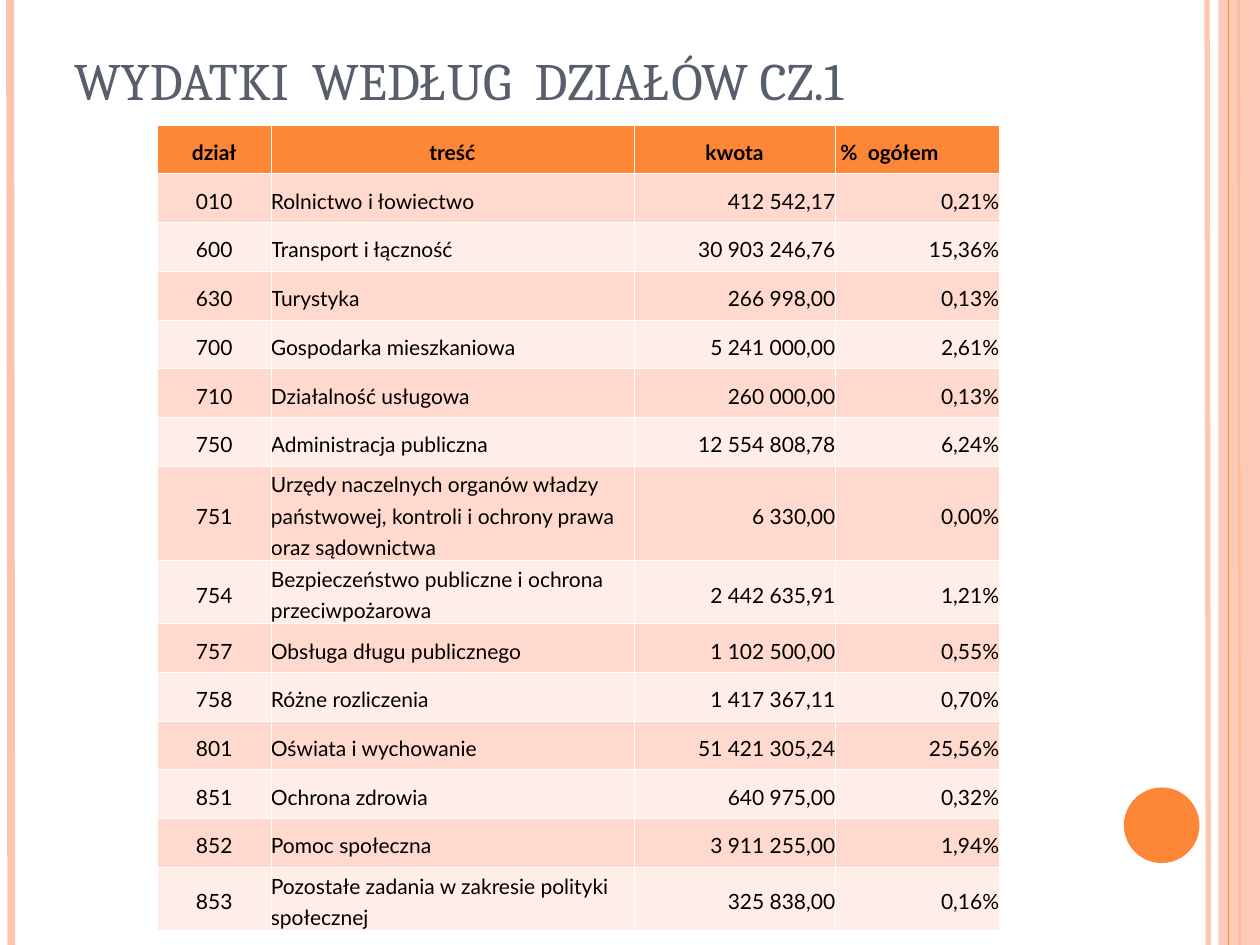
from lxml.etree import SubElement
from pptx import Presentation
from pptx.dml.color import RGBColor
from pptx.enum.shapes import MSO_CONNECTOR, MSO_SHAPE
from pptx.enum.text import MSO_ANCHOR, PP_ALIGN
from pptx.oxml.ns import qn
from pptx.util import Inches, Pt

# Content
TITLE = "WYDATKI  WEDŁUG  DZIAŁÓW CZ.1"
HEADER = ("dział", "treść", "kwota", " %  ogółem")
ROWS = [
    ("010", "Rolnictwo i łowiectwo", "412 542,17", "0,21%"),
    ("600", "Transport i łączność", "30 903 246,76", "15,36%"),
    ("630", "Turystyka", "266 998,00", "0,13%"),
    ("700", "Gospodarka mieszkaniowa", "5 241 000,00", "2,61%"),
    ("710", "Działalność usługowa", "260 000,00", "0,13%"),
    ("750", "Administracja publiczna", "12 554 808,78", "6,24%"),
    ("751", "Urzędy naczelnych organów władzy państwowej, kontroli "
            "i ochrony prawa oraz sądownictwa", "6 330,00", "0,00%"),
    ("754", "Bezpieczeństwo publiczne i ochrona przeciwpożarowa",
     "2 442 635,91", "1,21%"),
    ("757", "Obsługa długu publicznego", "1 102 500,00", "0,55%"),
    ("758", "Różne rozliczenia", "1 417 367,11", "0,70%"),
    ("801", "Oświata i wychowanie", "51 421 305,24", "25,56%"),
    ("851", "Ochrona zdrowia", "640 975,00", "0,32%"),
    ("852", "Pomoc społeczna", "3 911 255,00", "1,94%"),
    ("853", "Pozostałe zadania w zakresie polityki społecznej",
     "325 838,00", "0,16%"),
]

THEME = {
    "orange": "FE8637", "peach": "FEC3AE", "title": "575F6D",
    "text": "000000", "border": "FFFFFF", "bands": ("FFD9CE", "FFEDE8"),
    "title_font": "Cambria", "title_size": 30,
    "table_font": "Lato", "table_size": 12,
}

# Layout in inches
SLIDE_W, SLIDE_H = 10, 7.5
TABLE_X, TABLE_Y, TABLE_H = 1.25, 0.99, 6.39
COL_W = (0.9, 2.88, 1.6, 1.3)
TALL_ROWS = {7: 0.75, 8: 0.5, 14: 0.5}  # rows whose text wraps
HEADER_ALIGN = (PP_ALIGN.CENTER,) * 3 + (PP_ALIGN.LEFT,)
BODY_ALIGN = (PP_ALIGN.CENTER, PP_ALIGN.LEFT, PP_ALIGN.RIGHT, PP_ALIGN.RIGHT)
THIN, THICK = 0.06, 0.17  # cell borders in points


def rgb(name):
    return RGBColor.from_string(THEME.get(name, name))


def set_alpha(fill, percent):
    color = fill._xPr.find(qn("a:solidFill"))[0]
    SubElement(color, qn("a:alpha"), val=str(percent * 1000))


def add_stripe(s, x1, x2, color, width, alpha=100):
    line = s.shapes.add_connector(MSO_CONNECTOR.STRAIGHT, Inches(x1), 0,
                                  Inches(x2), Inches(SLIDE_H))
    line.line.color.rgb = rgb(color)
    line.line.width = Pt(width)
    if alpha < 100:
        set_alpha(line.line.fill, alpha)
    SubElement(line._element.spPr, qn("a:effectLst"))


def add_filled(s, kind, x, y, w, h, color):
    sp = s.shapes.add_shape(kind, Inches(x), Inches(y), Inches(w), Inches(h))
    sp.shadow.inherit = False
    sp.fill.solid()
    sp.fill.fore_color.rgb = rgb(color)
    sp.line.fill.background()
    return sp


def style_run(r, font, size, color, bold=False):
    r.font.name = font
    r.font.size = Pt(size)
    r.font.color.rgb = rgb(color)
    r.font.bold = bold


def set_borders(cell, widths):
    tcPr = cell._tc.get_or_add_tcPr()
    for i, (side, width) in enumerate(widths.items()):
        ln = tcPr.makeelement(qn(f"a:ln{side}"), {"w": str(Pt(width))})
        fill = SubElement(ln, qn("a:solidFill"))
        SubElement(fill, qn("a:srgbClr"), val=THEME["border"])
        tcPr.insert(i, ln)


def fill_cell(cell, text, row, align):
    cell.fill.solid()
    cell.fill.fore_color.rgb = rgb(THEME["bands"][(row - 1) % 2] if row else "orange")
    cell.margin_left = cell.margin_right = cell.margin_top = cell.margin_bottom = 0
    cell.vertical_anchor = MSO_ANCHOR.MIDDLE
    p = cell.text_frame.paragraphs[0]
    p.text = text
    p.alignment = align
    p.line_spacing = 1.25
    style_run(p.runs[0], THEME["table_font"], THEME["table_size"], "text", row == 0)
    set_borders(cell, {"L": THIN, "R": THIN, "T": THICK if row == 1 else THIN,
                       "B": THICK if row == 0 else THIN})


def add_budget_table(s):
    data = [HEADER] + ROWS
    table = s.shapes.add_table(len(data), len(COL_W), Inches(TABLE_X), Inches(TABLE_Y),
                               Inches(sum(COL_W)), Inches(TABLE_H)).table
    table.horz_banding = False
    for col, width in zip(table.columns, COL_W):
        col.width = Inches(width)
    row_h = (TABLE_H - sum(TALL_ROWS.values())) / (len(data) - len(TALL_ROWS))
    for i, values in enumerate(data):
        table.rows[i].height = Inches(TALL_ROWS.get(i, row_h))
        for j, text in enumerate(values):
            align = BODY_ALIGN[j] if i else HEADER_ALIGN[j]
            fill_cell(table.cell(i, j), text, i, align)


def main():
    prs = Presentation()
    prs.slide_width, prs.slide_height = Inches(SLIDE_W), Inches(SLIDE_H)
    s = prs.slides.add_slide(prs.slide_layouts[6])

    # Edge stripes and accent circle
    add_stripe(s, 9.58, 9.59, "peach", 3, 93)
    add_stripe(s, 0.08, 0.09, "peach", 4.5)
    add_stripe(s, 9.83, 9.84, "orange", 1.5)
    band = add_filled(s, MSO_SHAPE.RECTANGLE, 9.67, 0, 0.33, SLIDE_H, "peach")
    set_alpha(band.fill, 87)
    add_stripe(s, 9.75, 9.75, "orange", 0.75)
    add_filled(s, MSO_SHAPE.OVAL, 8.92, 6.25, 0.6, 0.6, "orange")

    # Title
    tf = s.shapes.add_textbox(Inches(0.49), Inches(0.24),
                              Inches(8.17), Inches(0.69)).text_frame
    tf.word_wrap = True
    tf.vertical_anchor = MSO_ANCHOR.BOTTOM
    tf.text = TITLE
    style_run(tf.paragraphs[0].runs[0], THEME["title_font"], THEME["title_size"], "title")

    # Spending table
    add_budget_table(s)
    prs.save("out.pptx")


if __name__ == "__main__":
    main()
